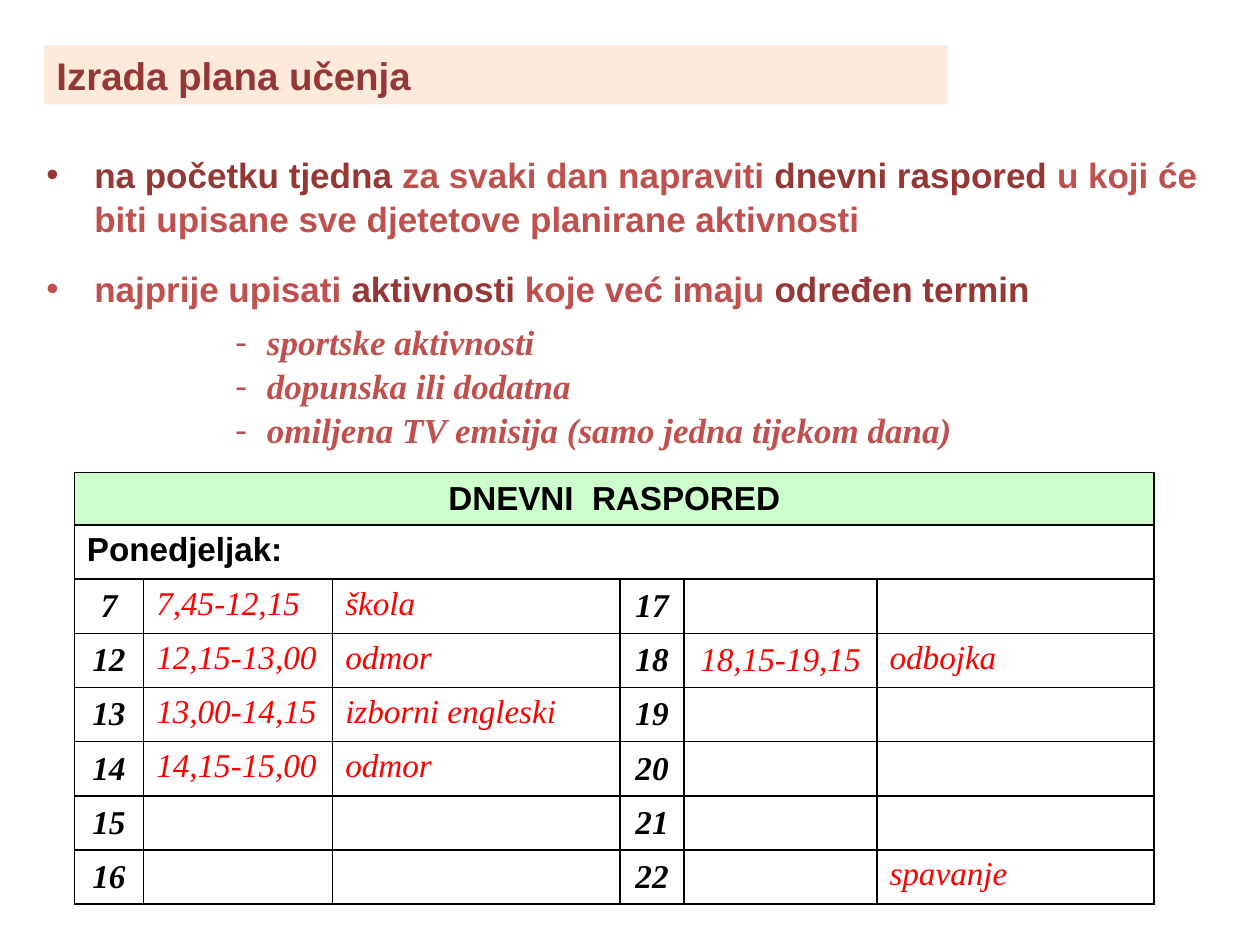
from dataclasses import dataclass

from lxml.etree import SubElement
from pptx import Presentation
from pptx.dml.color import RGBColor
from pptx.enum.shapes import MSO_SHAPE
from pptx.enum.text import MSO_ANCHOR, PP_ALIGN
from pptx.oxml.ns import qn
from pptx.slide import Slide
from pptx.table import _Cell
from pptx.text.text import _Paragraph
from pptx.util import Inches, Pt


@dataclass(frozen=True)
class Theme:
    dark: str = "953735"
    accent: str = "C0504D"
    entry: str = "FF0000"
    ink: str = "000000"
    banner: str = "FDEADA"
    header: str = "CCFFCC"
    sans: str = "Arial"
    serif: str = "Times New Roman"
    title_size: int = 22
    body_size: int = 20
    table_size: int = 19
    line_spacing: float = 1.05


THEME = Theme()


@dataclass(frozen=True)
class Style:
    size: int
    color: str
    font: str = THEME.sans
    bold: bool = True
    italic: bool = False


@dataclass(frozen=True)
class Bullet:
    runs: tuple[tuple[str, Style], ...]
    symbol: str = "•"
    font: str = THEME.sans
    indent: float = 0.38
    hanging: float = 0.38
    level: int = 0
    before: int = 4
    after: int = 0


@dataclass(frozen=True)
class Hour:
    hour: int
    time: str = ""
    activity: str = ""
    centered: bool = False


TITLE = Style(THEME.title_size, THEME.dark)
STRONG = Style(THEME.body_size, THEME.dark)
NORMAL = Style(THEME.body_size, THEME.accent)
EXAMPLE = Style(THEME.body_size, THEME.accent, THEME.serif, italic=True)
HEADING = Style(THEME.table_size, THEME.ink)
HOUR = Style(THEME.table_size, THEME.ink, THEME.serif, italic=True)
ENTRY = Style(THEME.table_size, THEME.entry, THEME.serif, bold=False, italic=True)


def example(text: str, after: int = 0) -> Bullet:
    return Bullet(((text, EXAMPLE),), "-", THEME.serif, 1.75, 0.25, 3, 0, after)


BULLETS = (
    Bullet((("na početku tjedna ", STRONG),
            ("za svaki dan napraviti ", NORMAL),
            ("dnevni raspored ", STRONG),
            ("u koji će biti upisane sve djetetove planirane aktivnosti", NORMAL)),
           after=11),
    Bullet((("najprije upisati ", NORMAL),
            ("aktivnosti ", STRONG),
            ("koje već imaju ", NORMAL),
            ("određen termin", STRONG)),
           after=5),
    example("sportske aktivnosti"),
    example("dopunska ili dodatna"),
    example("omiljena TV emisija (samo jedna tijekom dana)", after=17),
)

MORNING = (
    Hour(7, "7,45-12,15", "škola"),
    Hour(12, "12,15-13,00", "odmor"),
    Hour(13, "13,00-14,15", "izborni engleski"),
    Hour(14, "14,15-15,00", "odmor"),
    Hour(15),
    Hour(16),
)
EVENING = (
    Hour(17),
    Hour(18, "18,15-19,15", "odbojka", centered=True),
    Hour(19),
    Hour(20),
    Hour(21),
    Hour(22, activity="spavanje"),
)
COLUMN_WIDTHS = (0.55, 1.5, 2.28, 0.51, 1.53, 2.2)
HEADER_HEIGHT = 0.39
ROW_HEIGHT = 0.43


def add_span(para: _Paragraph, text: str, style: Style) -> None:
    span = para.add_run()
    span.text = text
    span.font.size = Pt(style.size)
    span.font.name = style.font
    span.font.bold = style.bold
    span.font.italic = style.italic
    span.font.color.rgb = RGBColor.from_string(style.color)


def add_title(page: Slide) -> None:
    box = page.shapes.add_shape(
        MSO_SHAPE.RECTANGLE, Inches(0.35), Inches(0.36), Inches(7.17), Inches(0.47))
    box.shadow.inherit = False
    box.fill.solid()
    box.fill.fore_color.rgb = RGBColor.from_string(THEME.banner)
    box.line.fill.background()
    box.text_frame.vertical_anchor = MSO_ANCHOR.MIDDLE
    para = box.text_frame.paragraphs[0]
    para.alignment = PP_ALIGN.LEFT
    add_span(para, "Izrada plana učenja", TITLE)


def fill_bullet(para: _Paragraph, bullet: Bullet) -> None:
    para.level = bullet.level
    para.line_spacing = THEME.line_spacing
    para.space_before = Pt(bullet.before)
    para.space_after = Pt(bullet.after)
    properties = para._p.get_or_add_pPr()
    properties.set("marL", str(Inches(bullet.indent)))
    properties.set("indent", str(-Inches(bullet.hanging)))
    SubElement(properties, qn("a:buFont"), typeface=bullet.font)
    SubElement(properties, qn("a:buChar"), char=bullet.symbol)
    for text, style in bullet.runs:
        add_span(para, text, style)


def add_bullets(page: Slide) -> None:
    box = page.shapes.add_textbox(Inches(0.27), Inches(1.15), Inches(9.53), Inches(2.44))
    frame = box.text_frame
    frame.word_wrap = True
    for index, bullet in enumerate(BULLETS):
        para = frame.add_paragraph() if index else frame.paragraphs[0]
        fill_bullet(para, bullet)


def frame_cell(cell: _Cell) -> None:
    """Give the cell thin borders on all sides and no fill."""
    properties = cell._tc.get_or_add_tcPr()
    for side in ("lnL", "lnR", "lnT", "lnB"):
        line = SubElement(properties, qn(f"a:{side}"), w=str(Pt(1)))
        SubElement(SubElement(line, qn("a:solidFill")), qn("a:srgbClr"), val=THEME.ink)
    cell.fill.background()


def write_cell(cell: _Cell, text: str, style: Style, centered: bool = False) -> None:
    if not text:
        return
    para = cell.text_frame.paragraphs[0]
    if centered:
        cell.vertical_anchor = MSO_ANCHOR.MIDDLE
        para.alignment = PP_ALIGN.CENTER
    add_span(para, text, style)


def add_schedule(page: Slide) -> None:
    rows, columns = len(MORNING) + 2, len(COLUMN_WIDTHS)
    heights = [HEADER_HEIGHT] + [ROW_HEIGHT] * (rows - 1)
    table = page.shapes.add_table(
        rows, columns, Inches(0.59), Inches(3.75),
        Inches(sum(COLUMN_WIDTHS)), Inches(sum(heights))).table
    table.first_row = table.horz_banding = False
    for column, width in zip(table.columns, COLUMN_WIDTHS):
        column.width = Inches(width)
    for row, height in zip(table.rows, heights):
        row.height = Inches(height)
        for cell in row.cells:
            frame_cell(cell)

    for row in range(2):
        table.cell(row, 0).merge(table.cell(row, columns - 1))
    header = table.cell(0, 0)
    header.fill.solid()
    header.fill.fore_color.rgb = RGBColor.from_string(THEME.header)
    write_cell(header, "DNEVNI  RASPORED", HEADING, centered=True)
    write_cell(table.cell(1, 0), "Ponedjeljak:", HEADING)

    for first, hours in ((0, MORNING), (3, EVENING)):
        for row, slot in enumerate(hours, start=2):
            write_cell(table.cell(row, first), str(slot.hour), HOUR, centered=True)
            write_cell(table.cell(row, first + 1), slot.time, ENTRY, slot.centered)
            write_cell(table.cell(row, first + 2), slot.activity, ENTRY)


def main() -> None:
    deck = Presentation()
    deck.slide_width, deck.slide_height = Inches(10), Inches(7.5)
    page = deck.slides.add_slide(deck.slide_layouts[6])
    add_title(page)
    add_bullets(page)
    add_schedule(page)
    deck.save("out.pptx")


if __name__ == "__main__":
    main()
